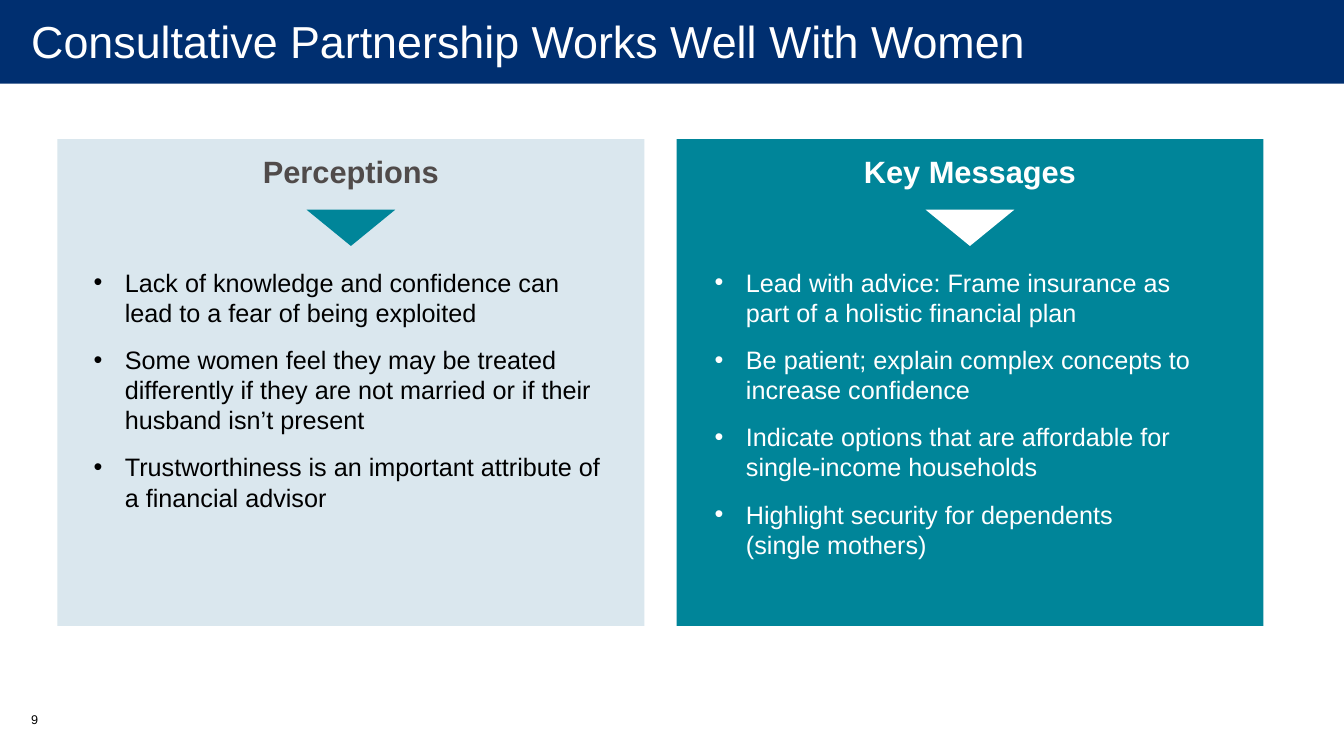
from pptx import Presentation
from pptx.dml.color import RGBColor
from pptx.enum import shapes, text
from pptx.oxml import parse_xml
from pptx.oxml.ns import nsdecls
from pptx.util import Inches, Pt

TITLE = "Consultative Partnership Works Well With Women"
PAGE_NUMBER = "9"
PANELS = [
    dict(heading="Perceptions", fill="pale", heading_color="gray",
         arrow="teal", body_color="black", list_left=0.83,
         bullets=["Lack of knowledge and confidence can lead to a fear of being exploited",
                  "Some women feel they may be treated differently if they are not "
                  "married or if their husband isn’t present",
                  "Trustworthiness is an important attribute of a financial advisor"]),
    dict(heading="Key Messages", fill="teal", heading_color="white",
         arrow="white", body_color="white", list_left=6.99,
         bullets=["Lead with advice: Frame insurance as\npart of a holistic financial plan",
                  "Be patient; explain complex concepts to increase confidence",
                  "Indicate options that are affordable for single-income households",
                  "Highlight security for dependents\n(single mothers)"]),
]

THEME = dict(
    font="Arial",
    colors=dict(navy="002F70", pale="DAE7EE", teal="008599", gray="504B4A",
                white="FFFFFF", black="000000"),
    sizes=dict(title=32, heading=22, body=18, page=9),
)

SLIDE_W, SLIDE_H = 13.33, 7.5
PANEL_LEFT, PANEL_TOP, PANEL_W, PANEL_H = 0.57, 1.38, 5.82, 4.83
PANEL_STEP = 6.14
ARROW_W, ARROW_H = 0.88, 0.36
LIST_W, LIST_INDENT = 5.35, 0.31


def color(name):
    return RGBColor.from_string(THEME["colors"][name])


def add_block(slide, kind, box, fill, rotation=0):
    """Add a borderless filled preset shape."""
    s = slide.shapes.add_shape(kind, *map(Inches, box))
    s.shadow.inherit = False
    s.fill.solid()
    s.fill.fore_color.rgb = color(fill)
    s.line.fill.background()
    s.rotation = rotation


def make_bullet(p):
    pPr = p._p.get_or_add_pPr()
    pPr.set("marL", str(Inches(LIST_INDENT)))
    pPr.set("indent", str(-Inches(LIST_INDENT)))
    pPr.append(parse_xml(f'<a:buFont {nsdecls("a")} typeface="Arial"/>'))
    pPr.append(parse_xml(f'<a:buChar {nsdecls("a")} char="•"/>'))


def add_text(slide, box, lines, size, fill, bold=False, align="LEFT",
             anchor="TOP", margins=(0.1, 0.05, 0.1, 0.05), bullets=False,
             space_after=0):
    tf = slide.shapes.add_textbox(*map(Inches, box)).text_frame
    tf.word_wrap = True
    tf.vertical_anchor = text.MSO_ANCHOR[anchor]
    (tf.margin_left, tf.margin_top,
     tf.margin_right, tf.margin_bottom) = map(Inches, margins)
    for i, line in enumerate(lines):
        p = tf.add_paragraph() if i else tf.paragraphs[0]
        if bullets:
            make_bullet(p)
        p.text = line
        p.alignment = text.PP_ALIGN[align]
        p.space_after = Pt(space_after)
        for r in p.runs:
            r.font.name = THEME["font"]
            r.font.size = Pt(THEME["sizes"][size])
            r.font.bold = bold
            r.font.color.rgb = color(fill)


def add_panel(slide, index, panel):
    left = PANEL_LEFT + index * PANEL_STEP
    add_block(slide, shapes.MSO_SHAPE.RECTANGLE,
              (left, PANEL_TOP, PANEL_W, PANEL_H), panel["fill"])
    add_text(slide, (panel["list_left"], 2.6, LIST_W, 3.03), panel["bullets"],
             "body", panel["body_color"], bullets=True, space_after=12)
    add_text(slide, (left, 1.47, PANEL_W, 0.47), [panel["heading"]],
             "heading", panel["heading_color"], bold=True, align="CENTER")
    add_block(slide, shapes.MSO_SHAPE.ISOSCELES_TRIANGLE,
              (left + (PANEL_W - ARROW_W) / 2, 2.08, ARROW_W, ARROW_H),
              panel["arrow"], rotation=180)


def main():
    prs = Presentation()
    prs.slide_width, prs.slide_height = Inches(SLIDE_W), Inches(SLIDE_H)
    slide = prs.slides.add_slide(prs.slide_layouts[6])
    add_block(slide, shapes.MSO_SHAPE.RECTANGLE, (0, -0.03, SLIDE_W, 0.86), "navy")
    add_text(slide, (0.01, -0.08, SLIDE_W, 0.97), [TITLE], "title", "white",
             anchor="MIDDLE", margins=(0.3, 0, 0.2, 0))
    for index, panel in enumerate(PANELS):
        add_panel(slide, index, panel)
    add_text(slide, (0.21, 7.01, 0.49, 0.4), [PAGE_NUMBER], "page", "black")
    prs.save("out.pptx")


if __name__ == "__main__":
    main()
